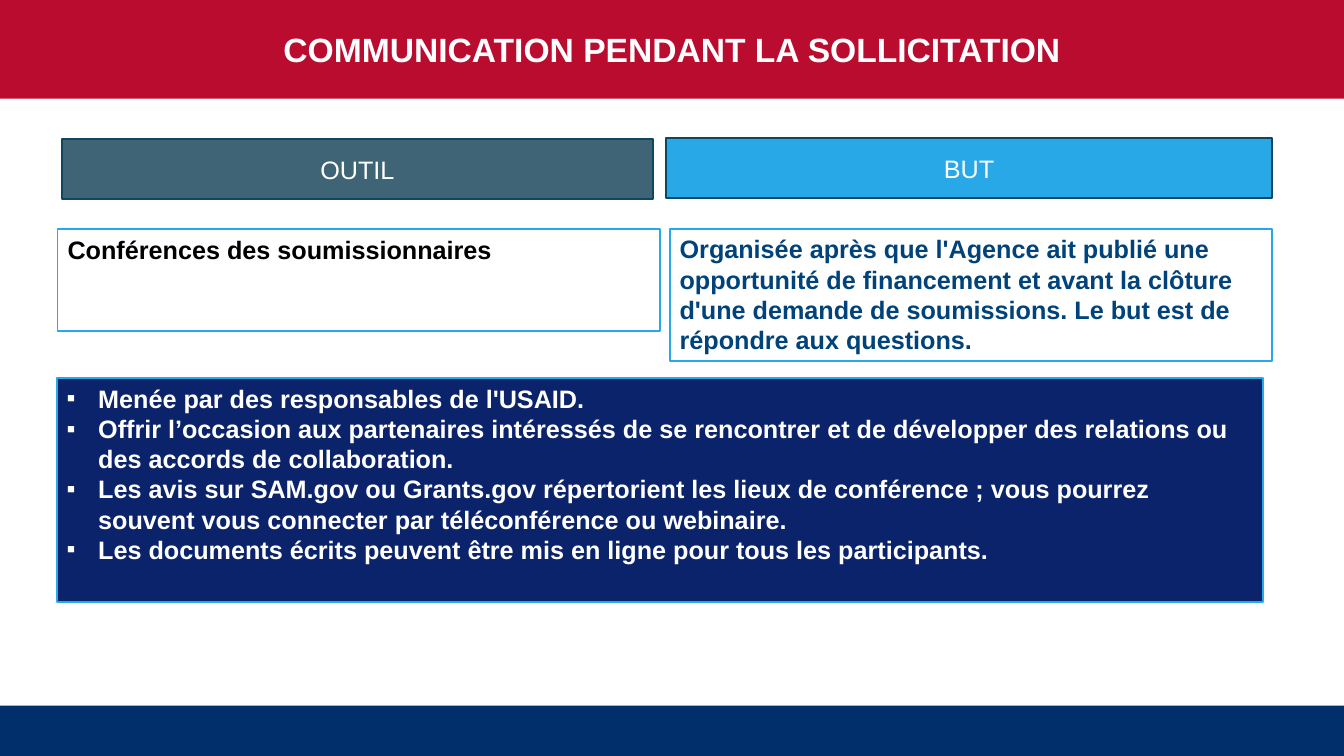
"""Build the slide on communication during the solicitation."""

from dataclasses import dataclass
from typing import Optional

from lxml.etree import SubElement
from pptx import Presentation
from pptx.dml.color import RGBColor
from pptx.enum.shapes import MSO_SHAPE
from pptx.enum.text import MSO_ANCHOR, MSO_AUTO_SIZE, PP_ALIGN
from pptx.oxml.ns import qn
from pptx.slide import Slide
from pptx.text.text import _Paragraph
from pptx.util import Pt

WHITE = "FFFFFF"
NAVY = "002F6C"
RED = "BA0C2F"
SKY = "29A8E7"
HEADER_LINE = "114661"
BULLET_INDENT = 22.5


@dataclass(frozen=True)
class Panel:
    left: float
    top: float
    width: float
    height: float
    fill: str
    line: Optional[str] = None
    texts: tuple[str, ...] = ()
    size: float = 18
    color: str = WHITE
    bold: bool = True
    centered: bool = False
    bulleted: bool = False


PANELS = (
    Panel(0, 504, 960, 36, NAVY),
    Panel(0, 0, 960, 70.5, RED, texts=("COMMUNICATION PENDANT LA SOLLICITATION",),
          size=24, centered=True),
    Panel(44.3, 99.4, 422, 43, "3F6475", HEADER_LINE, ("OUTIL",),
          bold=False, centered=True),
    Panel(475.8, 98.6, 432.8, 43, SKY, HEADER_LINE, ("BUT",),
          bold=False, centered=True),
    Panel(41.2, 163.6, 430.4, 72.7, WHITE, SKY,
          ("Conférences des soumissionnaires",), color="000000"),
    Panel(478.4, 163.4, 430.4, 94.5, WHITE, SKY,
          ("Organisée après que l'Agence ait publié une opportunité de financement "
           "et avant la clôture d'une demande de soumissions. Le but est de "
           "répondre aux questions.",), color="00437A"),
    Panel(40.6, 270, 861.4, 160, "0B236A", SKY,
          ("Menée par des responsables de l'USAID.",
           "Offrir l’occasion aux partenaires intéressés de se rencontrer et de "
           "développer des relations ou des accords de collaboration.",
           "Les avis sur SAM.gov ou Grants.gov répertorient les lieux de "
           "conférence ; vous pourrez souvent vous connecter par téléconférence "
           "ou webinaire.",
           "Les documents écrits peuvent être mis en ligne pour tous les "
           "participants."), bulleted=True),
)


def rgb(value: str) -> RGBColor:
    """Return the colour for a hex string."""
    return RGBColor.from_string(value)


def add_bullet(paragraph: _Paragraph) -> None:
    """Give a paragraph a hanging white square bullet."""
    properties = paragraph._p.get_or_add_pPr()
    properties.set("marL", str(Pt(BULLET_INDENT)))
    properties.set("indent", str(-Pt(BULLET_INDENT)))
    bullet_color = SubElement(properties, qn("a:buClr"))
    SubElement(bullet_color, qn("a:srgbClr"), val=WHITE)
    SubElement(properties, qn("a:buFont"), typeface="Arial")
    SubElement(properties, qn("a:buChar"), char="▪")


def add_panel(slide: Slide, panel: Panel) -> None:
    """Draw one rectangle with its text."""
    shape = slide.shapes.add_shape(
        MSO_SHAPE.RECTANGLE,
        Pt(panel.left), Pt(panel.top), Pt(panel.width), Pt(panel.height),
    )
    shape.shadow.inherit = False
    shape.fill.solid()
    shape.fill.fore_color.rgb = rgb(panel.fill)
    if panel.line:
        shape.line.color.rgb = rgb(panel.line)
        shape.line.width = Pt(1.25)
    else:
        shape.line.fill.background()

    frame = shape.text_frame
    frame.word_wrap = True
    frame.auto_size = MSO_AUTO_SIZE.NONE
    frame.vertical_anchor = MSO_ANCHOR.MIDDLE if panel.centered else MSO_ANCHOR.TOP
    for index, text in enumerate(panel.texts):
        paragraph = frame.add_paragraph() if index else frame.paragraphs[0]
        paragraph.alignment = PP_ALIGN.CENTER if panel.centered else PP_ALIGN.LEFT
        if panel.bulleted:
            add_bullet(paragraph)
        run = paragraph.add_run()
        run.text = text
        run.font.name = "Arial"
        run.font.size = Pt(panel.size)
        run.font.bold = panel.bold
        run.font.color.rgb = rgb(panel.color)


def main() -> None:
    """Create and save the presentation."""
    presentation = Presentation()
    presentation.slide_width = Pt(960)
    presentation.slide_height = Pt(540)
    slide = presentation.slides.add_slide(presentation.slide_layouts[6])
    for panel in PANELS:
        add_panel(slide, panel)
    presentation.save("out.pptx")


if __name__ == "__main__":
    main()
